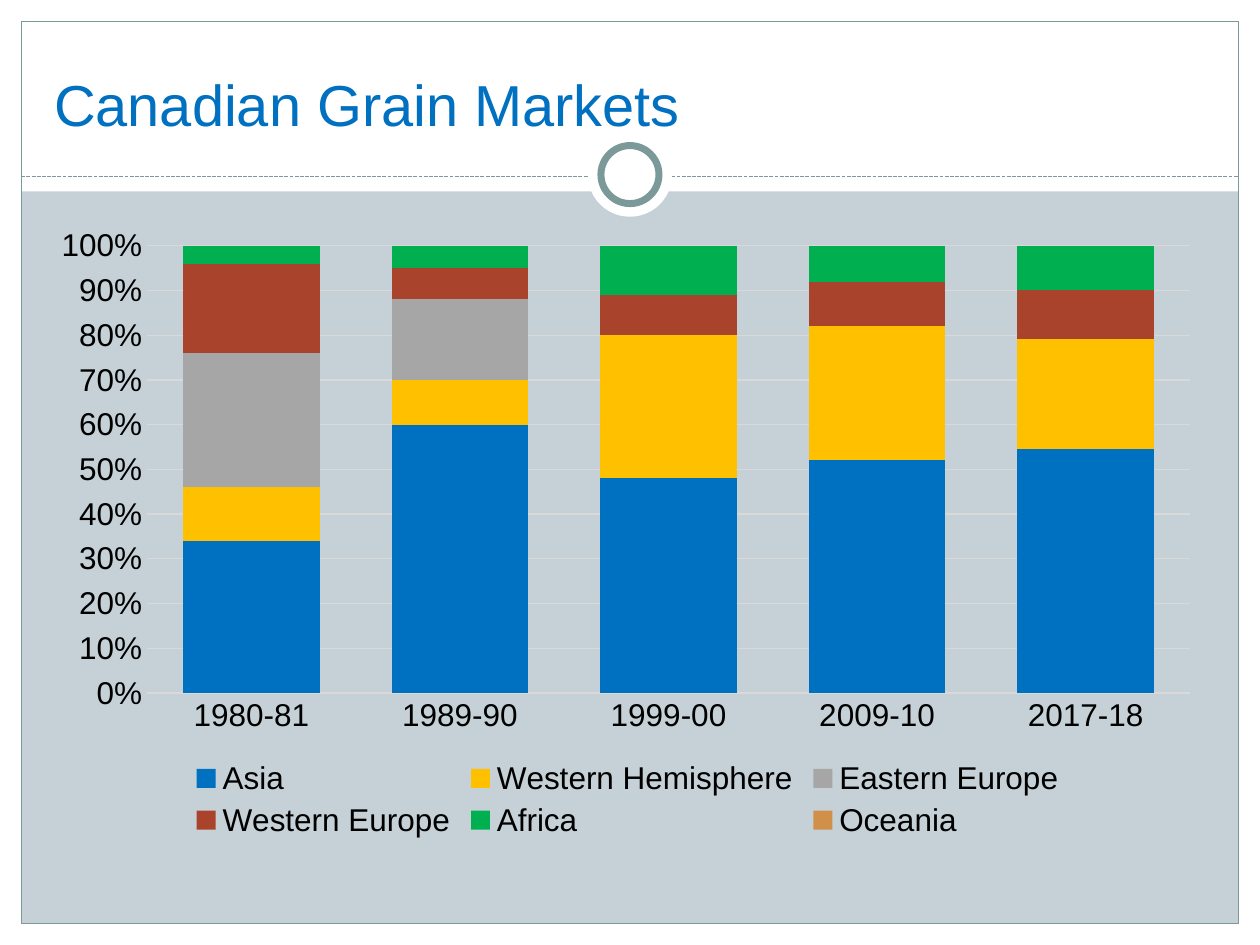
from lxml import etree
from pptx import Presentation
from pptx.chart.data import CategoryChartData
from pptx.dml.color import RGBColor
from pptx.enum import chart as ch, dml, shapes, text
from pptx.oxml import parse_xml
from pptx.oxml.ns import nsdecls, qn
from pptx.util import Cm, Pt

WHITE = RGBColor(0xFF, 0xFF, 0xFF)
BLACK = RGBColor(0, 0, 0)
MIST = RGBColor(0xC5, 0xD1, 0xD7)
TEAL = RGBColor(0x7C, 0x99, 0x9A)
GRID = RGBColor(0xD9, 0xD9, 0xD9)
BLUE = RGBColor(0x00, 0x70, 0xC0)
GOLD = RGBColor(0xFF, 0xC0, 0x00)
GRAY = RGBColor(0xA6, 0xA6, 0xA6)
RUST = RGBColor(0xA9, 0x43, 0x2B)
GREEN = RGBColor(0x00, 0xB0, 0x50)
TAN = RGBColor(0xD1, 0x90, 0x49)
FONT = "Arial"

YEARS = ["1980-81", "1989-90", "1999-00", "2009-10", "2017-18"]
MARKETS = [
    ("Asia", BLUE, (34, 60, 48, 52, 55)),
    ("Western Hemisphere", GOLD, (12, 10, 32, 30, 25)),
    ("Eastern Europe", GRAY, (30, 18, 0, 0, 0)),
    ("Western Europe", RUST, (20, 7, 9, 10, 11)),
    ("Africa", GREEN, (4, 5, 11, 8, 10)),
    ("Oceania", TAN, (0, 0, 0, 0, 0)),
]


def add_form(slide, kind, box, fill=None, line=None, width=0.75):
    form = slide.shapes.add_shape(kind, *map(Cm, box))
    form.shadow.inherit = False
    if fill is None:
        form.fill.background()
    else:
        form.fill.solid()
        form.fill.fore_color.rgb = fill
    if line is None:
        form.line.fill.background()
    else:
        form.line.color.rgb = line
        form.line.width = Pt(width)


def draw_frame(slide, box, edge, head):
    left, top, width, height = box
    rect = shapes.MSO_SHAPE.RECTANGLE
    bands = [
        (left, top + height - edge, width, edge),
        (left, top, width, head),
        (left, top, edge, height),
        (left + width - edge, top, edge, height),
    ]
    for band in bands:
        add_form(slide, rect, band, WHITE)
    inner = (left + edge, top + edge, width - 2 * edge, height - 2 * edge)
    add_form(slide, rect, inner, line=TEAL)


def draw_rule(slide, left, top, width):
    rule = slide.shapes.add_connector(
        shapes.MSO_CONNECTOR.STRAIGHT,
        Cm(left), Cm(top), Cm(left + width), Cm(top))
    rule.line.color.rgb = TEAL
    rule.line.width = Pt(0.75)
    rule.line.dash_style = dml.MSO_LINE.SQUARE_DOT
    etree.SubElement(rule._element.spPr, qn("a:effectLst"))
    mid = left + width / 2
    for size, line in ((1.7, None), (1.17, TEAL)):
        box = (mid - size / 2, top - 0.04 - size / 2, size, size)
        add_form(slide, shapes.MSO_SHAPE.OVAL, box, WHITE, line, 4)


def draw_title(slide, box, words):
    frame = slide.shapes.add_textbox(*map(Cm, box)).text_frame
    frame.word_wrap = True
    frame.vertical_anchor = text.MSO_ANCHOR.MIDDLE
    run = frame.paragraphs[0].add_run()
    run.text = words
    run.font.name = FONT
    run.font.size = Pt(33)
    run.font.color.rgb = BLUE


def set_font(font):
    font.name = FONT
    font.size = Pt(18)
    font.color.rgb = BLACK


def fix_plot(chart, **parts):
    area = chart._chartSpace.chart.plotArea
    for old in area.findall(qn("c:layout")):
        area.remove(old)
    sizes = "".join(f'<c:{key} val="{val}"/>' for key, val in parts.items())
    area.insert(0, parse_xml(
        f'<c:layout {nsdecls("c")}><c:manualLayout>'
        '<c:layoutTarget val="inner"/><c:xMode val="edge"/>'
        f'<c:yMode val="edge"/>{sizes}</c:manualLayout></c:layout>'))


def draw_chart(slide, box):
    data = CategoryChartData()
    data.categories = YEARS
    for name, _, vals in MARKETS:
        data.add_series(name, vals)
    chart = slide.shapes.add_chart(
        ch.XL_CHART_TYPE.COLUMN_STACKED_100, *map(Cm, box), data).chart
    chart.has_title = False
    set_font(chart.font)
    plot = chart.plots[0]
    plot.gap_width = 53
    plot.overlap = 100
    plot.vary_by_categories = False
    for series, (_, color, _) in zip(plot.series, MARKETS):
        series.format.fill.solid()
        series.format.fill.fore_color.rgb = color
    years, share = chart.category_axis, chart.value_axis
    for axis in (years, share):
        axis.major_tick_mark = ch.XL_TICK_MARK.NONE
        axis.minor_tick_mark = ch.XL_TICK_MARK.NONE
        set_font(axis.tick_labels.font)
    share.minimum_scale = 0
    share.maximum_scale = 1
    share.major_unit = 0.1
    share.tick_labels.number_format = "0%"
    share.tick_labels.number_format_is_linked = False
    share.format.line.fill.background()
    share.has_major_gridlines = True
    for line in (years.format.line, share.major_gridlines.format.line):
        line.color.rgb = GRID
        line.width = Pt(0.75)
    chart.has_legend = True
    chart.legend.position = ch.XL_LEGEND_POSITION.BOTTOM
    chart.legend.include_in_layout = False
    set_font(chart.legend.font)
    fix_plot(chart, x=0.09, y=0.05, w=0.89, h=0.71)


def main():
    deck = Presentation()
    deck.slide_width, deck.slide_height = Cm(25.4), Cm(19.05)
    slide = deck.slides.add_slide(deck.slide_layouts[6])
    slide.background.fill.solid()
    slide.background.fill.fore_color.rgb = MIST
    draw_frame(slide, (0, 0, 25.4, 19.05), 0.43, 3.86)
    draw_rule(slide, 0.43, 3.56, 24.54)
    draw_title(slide, (0.84, 1.04, 23.7, 2.11), "Canadian Grain Markets")
    draw_chart(slide, (0.84, 4.32, 23.62, 12.7))
    deck.save("out.pptx")


if __name__ == "__main__":
    main()
